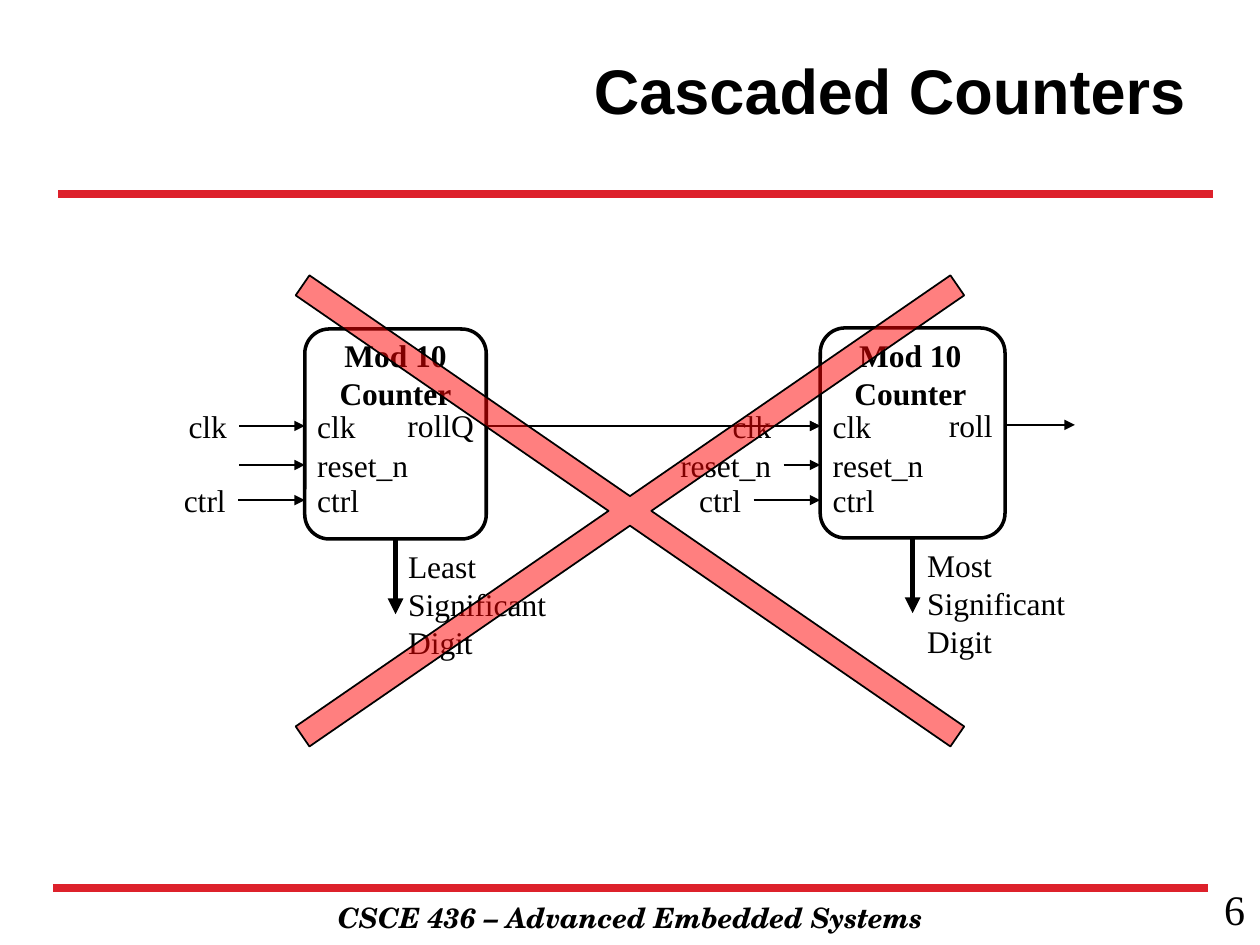
from dataclasses import dataclass

from lxml.etree import SubElement
from pptx import Presentation
from pptx.dml.color import RGBColor
from pptx.enum.shapes import MSO_CONNECTOR as Connector, MSO_SHAPE as Shape
from pptx.enum.text import MSO_ANCHOR as Anchor, MSO_AUTO_SIZE as AutoSize, PP_ALIGN as Align
from pptx.oxml.ns import qn
from pptx.util import Pt


@dataclass(frozen=True)
class Theme:
    ink: RGBColor = RGBColor(0, 0, 0)
    rule: RGBColor = RGBColor(0xDD, 0x21, 0x2B)
    cross: RGBColor = RGBColor(0xFF, 0, 0)
    title_font: str = "Arial"
    body_font: str = "Times New Roman"
    footer_font: str = "TeX Gyre Schola"
    title_size: int = 36
    number_size: int = 24
    body_size: int = 18
    footer_size: int = 16


THEME = Theme()
ROWS = {"clk": 243.4, "reset_n": 265.7, "ctrl": 285.8}
LABEL_HEIGHT = 28.8
COUNTER_HEIGHT = 120


def format_text(frame, text, size=THEME.body_size, font=THEME.body_font,
                align=Align.LEFT, bold=False, italic=False):
    frame.word_wrap = True
    frame.text = text
    paragraph = frame.paragraphs[0]
    paragraph.alignment = align
    paragraph.space_before = Pt(0)
    run_font = paragraph.runs[0].font
    run_font.name, run_font.size = font, Pt(size)
    run_font.bold, run_font.italic = bold, italic
    run_font.color.rgb = THEME.ink


def add_label(slide, text, left, top, width, height=LABEL_HEIGHT, **style):
    label = slide.shapes.add_textbox(Pt(left), Pt(top), Pt(width), Pt(height))
    format_text(label.text_frame, text, **style)


def add_line(slide, start, end, width=1, color=THEME.ink, arrow=True):
    line = slide.shapes.add_connector(Connector.STRAIGHT, *map(Pt, start + end))
    line.line.color.rgb = color
    line.line.width = Pt(width)
    if arrow:
        SubElement(line.line._get_or_add_ln(), qn("a:tailEnd"), type="triangle")
    SubElement(line._element.spPr, qn("a:effectLst"))
    return line


def add_outline(slide, kind, left, top, width, height, adjustment, weight):
    outline = slide.shapes.add_shape(kind, Pt(left), Pt(top), Pt(width), Pt(height))
    outline.adjustments[0] = adjustment
    outline.shadow.inherit = False
    outline.line.color.rgb = THEME.ink
    outline.line.width = Pt(weight)
    return outline


def add_title(slide, text):
    title = slide.shapes.title
    title.left, title.top, title.width, title.height = map(Pt, (150.5, 5.8, 534.2, 90))
    title.text_frame.auto_size = AutoSize.NONE
    title.text_frame.vertical_anchor = Anchor.MIDDLE
    format_text(title.text_frame, text, size=THEME.title_size, font=THEME.title_font,
                align=Align.RIGHT, bold=True)


def add_counter(slide, left, top, width, heading_left, heading_width, inputs, output, digit, digit_left):
    counter = add_outline(slide, Shape.ROUNDED_RECTANGLE, left, top, width,
                          COUNTER_HEIGHT, 0.135, 2)
    counter.fill.background()
    add_label(slide, "Mod 10 Counter", heading_left, 188.6, heading_width, 51.1,
              align=Align.CENTER, bold=True)
    for port, (source, wire_start) in inputs.items():
        row = ROWS[port]
        add_line(slide, (wire_start, row), (left, row))
        add_label(slide, port, left, row - LABEL_HEIGHT / 2, 74)
        if source:
            add_label(slide, source, wire_start - 77, row - LABEL_HEIGHT / 2, 77,
                      align=Align.RIGHT)
    right = left + width
    add_label(slide, output, right - 78, ROWS["clk"] - 15, 78, align=Align.RIGHT)

    middle, bottom = left + width / 2, top + COUNTER_HEIGHT
    digit_arrow = add_line(slide, (middle, bottom), (middle, bottom + 43), width=3)
    digit_arrow.begin_connect(counter, 2)
    add_label(slide, digit, digit_left, bottom + 1.2, 98, 72.7)
    return right


def add_cross(slide):
    cross = add_outline(slide, Shape.MATH_MULTIPLY, 0, 43.9, 720, 496.1, 0.028, 1)
    cross.fill.solid()
    cross.fill.fore_color.rgb = THEME.cross
    color = cross._element.spPr.find(qn("a:solidFill"))[0]
    SubElement(color, qn("a:alpha"), val="50000")


def main():
    deck = Presentation()
    deck.slide_width, deck.slide_height = Pt(720), Pt(540)
    slide = deck.slides.add_slide(deck.slide_layouts[5])

    add_label(slide, "CSCE 436 – Advanced Embedded Systems", 102.2, 511.2, 516.2, 26.6,
              size=THEME.footer_size, font=THEME.footer_font,
              align=Align.CENTER, bold=True, italic=True)
    for left, top in ((30.2, 507.6), (33.3, 110.9)):
        add_line(slide, (left, top), (left + 660, top), width=4.5, color=THEME.rule, arrow=False)
    add_title(slide, "Cascaded Counters")

    low_inputs = {"clk": ("clk", 136.8), "reset_n": (None, 136.8), "ctrl": ("ctrl", 136.1)}
    high_inputs = {"clk": ("clk", 447.8), "reset_n": ("reset_n", 447.8), "ctrl": ("ctrl", 430.6)}
    high_left = 468.7
    low_right = add_counter(slide, 174.2, 188, 103.7, 177.8, 96.5, low_inputs, "rollQ",
                            "Least Significant Digit", 226.1)
    high_right = add_counter(slide, high_left, 187.4, 105.6, 468, 104.4, high_inputs, "roll",
                             "Most Significant Digit", 522.7)
    row = ROWS["clk"]
    add_line(slide, (low_right, row), (high_left, row))
    add_line(slide, (high_right, row - 0.6), (614.2, row - 0.6))

    add_cross(slide)
    add_label(slide, "6", 550.8, 501.1, 167.8, 37.4, size=THEME.number_size, align=Align.RIGHT)
    deck.save("out.pptx")


if __name__ == "__main__":
    main()
